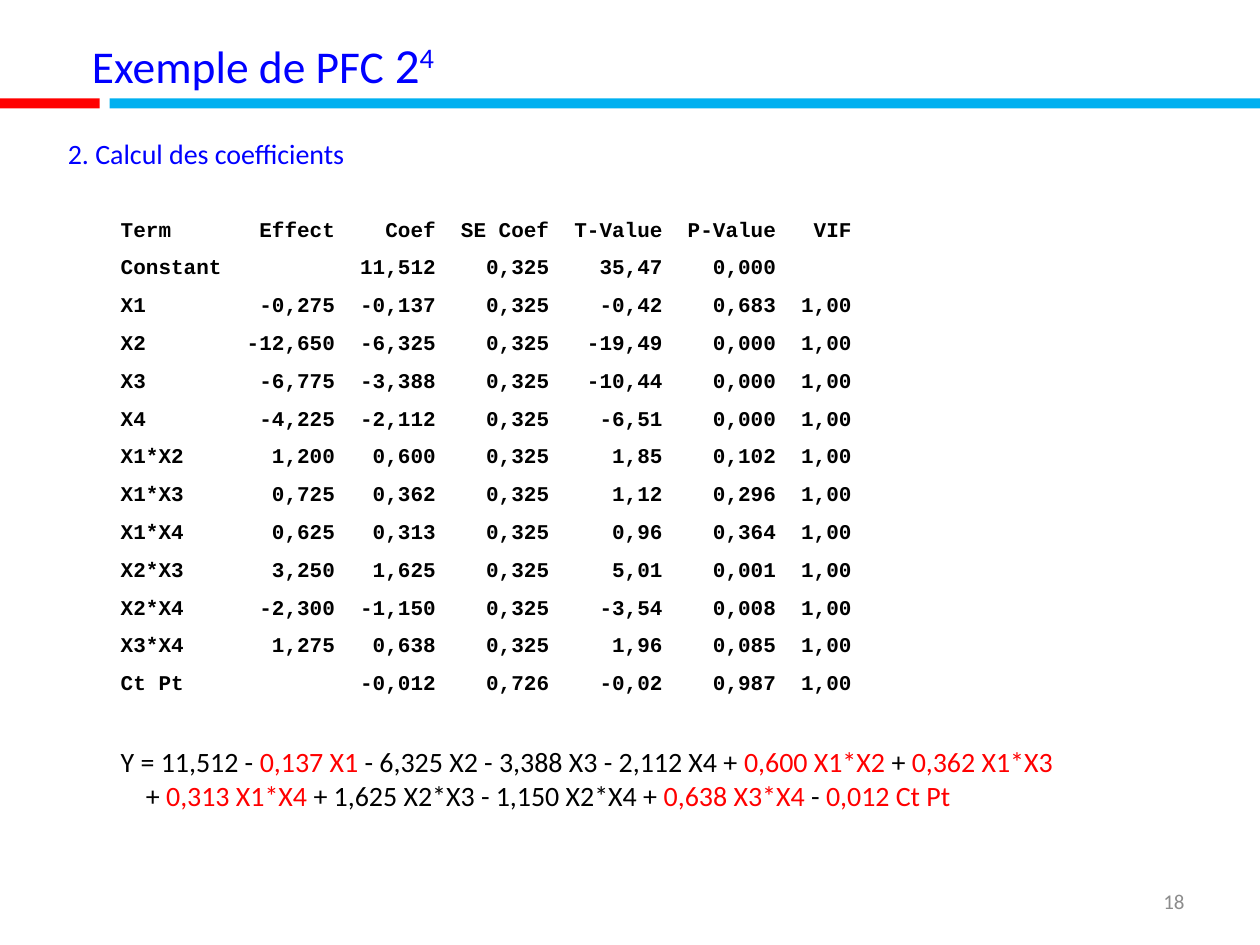
from dataclasses import dataclass

from lxml import etree
from pptx import Presentation
from pptx import util as u
from pptx.dml.color import RGBColor
from pptx.enum import shapes, text
from pptx.oxml.ns import qn

# Grid of 100 columns by 75 rows; a column is one character of 12 pt Courier New
UNIT = u.Inches(0.1)
BLUE, RED, BLACK, GREY, SKY = "0000FF", "FF0000", "000000", "8C8C8C", "00B0F0"


@dataclass(frozen=True)
class Box:
    col: float
    row: float
    cols: float
    rows: float

    def emu(self) -> list[int]:
        return [round(n * UNIT) for n in (self.col, self.row, self.cols, self.rows)]


@dataclass(frozen=True)
class Run:
    text: str
    color: str = BLACK
    size: float = 16
    font: str = "Calibri"
    bold: bool = False
    raised: bool = False


@dataclass(frozen=True)
class Line:
    runs: list[Run]
    align: text.PP_ALIGN = text.PP_ALIGN.LEFT
    spacing: float = 1.0
    indent: float = 0
    tabs: tuple[int, ...] = ()


def rgb(color: str) -> RGBColor:
    return RGBColor.from_string(color)


def add_line(p, line: Line) -> None:
    p.alignment, p.line_spacing = line.align, line.spacing
    pPr = p._p.get_or_add_pPr()
    if line.indent:
        pPr.set("marL", str(round(line.indent * UNIT)))
    if line.tabs:
        stops = etree.SubElement(pPr, qn("a:tabLst"))
        for col in line.tabs:
            etree.SubElement(stops, qn("a:tab"), pos=str(col * UNIT), algn="r")
    for run in line.runs:
        r = p.add_run()
        r.text = run.text
        r.font.name, r.font.size, r.font.bold = run.font, u.Pt(run.size), run.bold
        r.font.color.rgb = rgb(run.color)
        if run.raised:
            r._r.get_or_add_rPr().set("baseline", "30000")


def add_text(s, box: Box, lines: list[Line], anchor=text.MSO_ANCHOR.MIDDLE) -> None:
    tf = s.shapes.add_textbox(*box.emu()).text_frame
    tf.word_wrap, tf.vertical_anchor = True, anchor
    for i, line in enumerate(lines):
        add_line(tf.add_paragraph() if i else tf.paragraphs[0], line)


def add_bar(s, box: Box, color: str) -> None:
    sp = s.shapes.add_shape(shapes.MSO_SHAPE.RECTANGLE, *box.emu())
    sp.shadow.inherit = False
    sp.fill.solid()
    sp.fill.fore_color.rgb = rgb(color)
    sp.line.fill.background()


# Right edges of the numeric columns, in characters
STOPS = (17, 25, 34, 43, 52, 58)
COEFFICIENTS = [
    ("Term", "Effect", "Coef", "SE Coef", "T-Value", "P-Value", "VIF"),
    ("Constant", "", "11,512", "0,325", "35,47", "0,000"),
    ("X1", "-0,275", "-0,137", "0,325", "-0,42", "0,683", "1,00"),
    ("X2", "-12,650", "-6,325", "0,325", "-19,49", "0,000", "1,00"),
    ("X3", "-6,775", "-3,388", "0,325", "-10,44", "0,000", "1,00"),
    ("X4", "-4,225", "-2,112", "0,325", "-6,51", "0,000", "1,00"),
    ("X1*X2", "1,200", "0,600", "0,325", "1,85", "0,102", "1,00"),
    ("X1*X3", "0,725", "0,362", "0,325", "1,12", "0,296", "1,00"),
    ("X1*X4", "0,625", "0,313", "0,325", "0,96", "0,364", "1,00"),
    ("X2*X3", "3,250", "1,625", "0,325", "5,01", "0,001", "1,00"),
    ("X2*X4", "-2,300", "-1,150", "0,325", "-3,54", "0,008", "1,00"),
    ("X3*X4", "1,275", "0,638", "0,325", "1,96", "0,085", "1,00"),
    ("Ct Pt", "", "-0,012", "0,726", "-0,02", "0,987", "1,00"),
]

# Model equation: terms that are not significant are red
EQUATION = [
    Line([Run("Y = 11,512 - "), Run("0,137 X1 ", RED),
          Run("- 6,325 X2 - 3,388 X3 - 2,112 X4 + "),
          Run("0,600 X1*X2 ", RED), Run("+ "), Run("0,362 X1*X3", RED)]),
    Line([Run("+ "), Run("0,313 X1*X4 ", RED),
          Run("+ 1,625 X2*X3 - 1,150 X2*X4 + "),
          Run("0,638 X3*X4 ", RED), Run("- "), Run("0,012 Ct Pt", RED)], indent=2),
]


def main() -> None:
    prs = Presentation()
    prs.slide_width, prs.slide_height = 100 * UNIT, 75 * UNIT
    s = prs.slides.add_slide(prs.slide_layouts[6])

    # Slide number
    add_text(s, Box(71.7, 69.5, 23.3, 4),
             [Line([Run("18", GREY, 12)], text.PP_ALIGN.RIGHT)])

    # Coefficient listing, aligned on right tab stops
    add_text(s, Box(8.6, 15.6, 64.8, 40.1),
             [Line([Run("\t".join(row), size=12, font="Courier New", bold=True)],
                   spacing=1.5, tabs=STOPS) for row in COEFFICIENTS])

    # Title and its two-colour rule
    add_text(s, Box(5.5, 2.3, 44.5, 5.5),
             [Line([Run(" Exemple de PFC ", BLUE, 26), Run("2", BLUE, 28),
                    Run("4", BLUE, 28, raised=True)])])
    add_bar(s, Box(8.7, 7.8, 91.3, 0.8), SKY)
    add_bar(s, Box(0, 7.8, 7.9, 0.8), RED)

    # Equation and section heading
    add_text(s, Box(8.6, 58.6, 83.6, 6.4), EQUATION, text.MSO_ANCHOR.TOP)
    add_text(s, Box(3.9, 9.4, 44.5, 5.5),
             [Line([Run(" 2. Calcul des coefficients", BLUE)])])

    prs.save("out.pptx")


if __name__ == "__main__":
    main()
